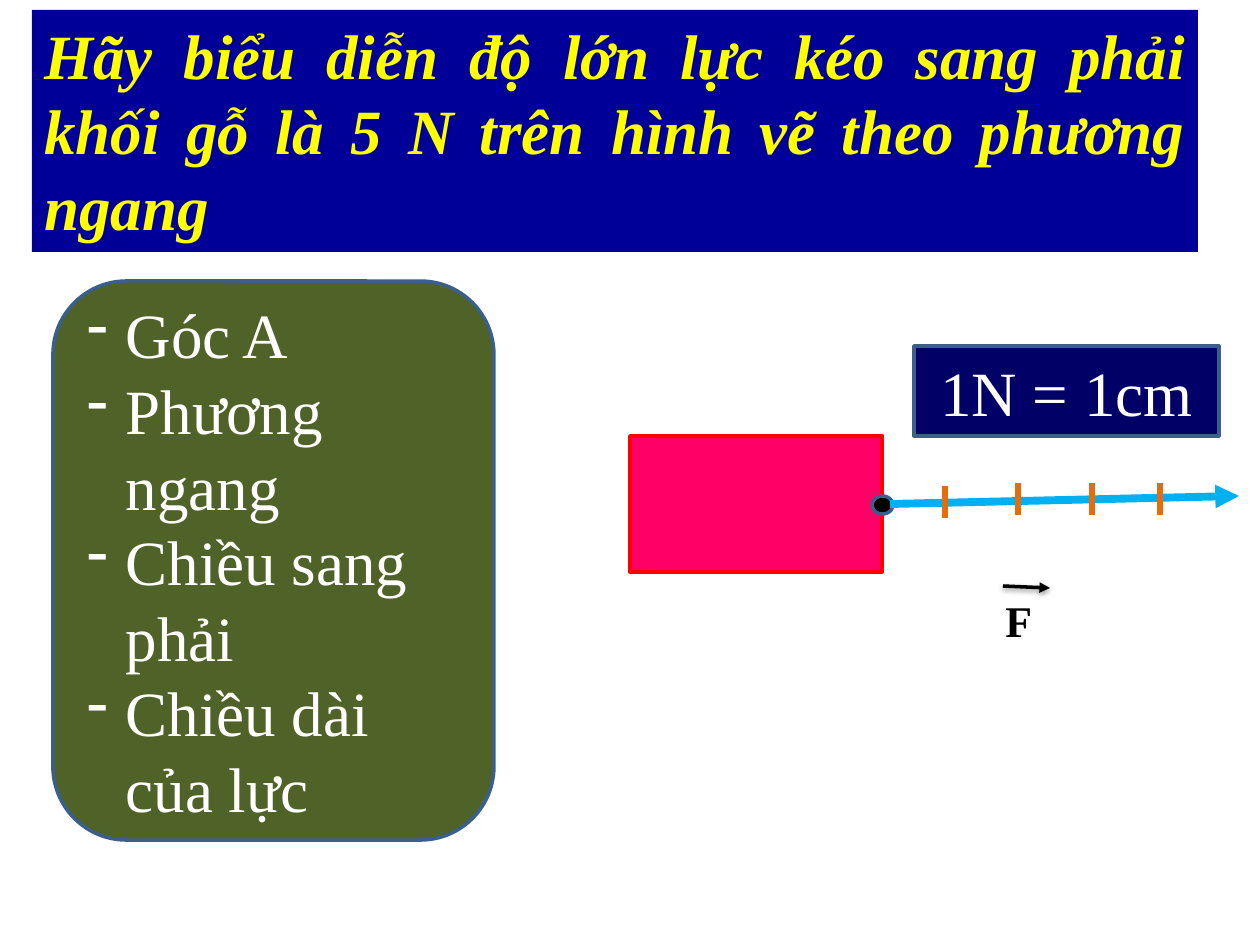
from lxml import etree
from pptx import Presentation
from pptx import util as u
from pptx.dml.color import RGBColor
from pptx.enum import shapes, text
from pptx.oxml.ns import qn

COLORS = {
    "navy": "000099", "deep_navy": "000066", "yellow": "FFFF00",
    "pink": "FF0066", "red": "FF0000", "olive": "4F6228",
    "steel": "3A5F8C", "sky": "00B0F0", "orange": "E46C0A",
    "white": "FFFFFF", "black": "000000",
}
SCALE = u.Inches(1) / 126


def px(length):
    return round(length * SCALE)


def rgb(name):
    return RGBColor.from_string(COLORS[name])


class ForceSlide:
    font_name = "Times New Roman"

    def __init__(self, slide):
        self.slide = slide

    def fill_text(self, frame, lines, size, color, align, bullet=None, **formats):
        frame.word_wrap = True
        for index, line in enumerate(lines):
            paragraph = frame.paragraphs[0] if index == 0 else frame.add_paragraph()
            paragraph.alignment = align
            run = paragraph.add_run()
            run.text = line
            run.font.color.rgb = rgb(color)
            style = {"name": self.font_name, "size": u.Pt(size), **formats}
            for attribute, value in style.items():
                setattr(run.font, attribute, value)
            if bullet:
                properties = paragraph._p.get_or_add_pPr()
                properties.set("marL", str(px(39)))
                properties.set("indent", str(-px(39)))
                etree.SubElement(properties, qn("a:buFontTx"))
                etree.SubElement(properties, qn("a:buChar"), char=bullet)

    def block(self, kind, box, fill, line=None):
        block = self.slide.shapes.add_shape(kind, *map(px, box))
        block.shadow.inherit = False
        block.fill.solid()
        block.fill.fore_color.rgb = rgb(fill)
        if line:
            block.line.color.rgb = rgb(line)
            block.line.width = u.Pt(2)
        else:
            block.line.fill.background()
        block.text_frame.vertical_anchor = text.MSO_ANCHOR.MIDDLE
        return block

    def label(self, box):
        frame = self.slide.shapes.add_textbox(*map(px, box)).text_frame
        frame.auto_size = text.MSO_AUTO_SIZE.SHAPE_TO_FIT_TEXT
        return frame

    def line(self, start, end, color, width, arrow=False, shadow=False):
        line = self.slide.shapes.add_connector(
            shapes.MSO_CONNECTOR.STRAIGHT, *map(px, start + end))
        line.line.color.rgb = rgb(color)
        line.line.width = u.Pt(width)
        if arrow:
            etree.SubElement(line.line._get_or_add_ln(), qn("a:tailEnd"), type="triangle")
        effects = etree.SubElement(line._element.spPr, qn("a:effectLst"))
        if shadow:
            outer = etree.SubElement(
                effects, qn("a:outerShdw"), blurRad=str(u.Pt(3.1)),
                dist=str(u.Pt(1.6)), dir="5400000", rotWithShape="0")
            tint = etree.SubElement(outer, qn("a:srgbClr"), val=COLORS["black"])
            etree.SubElement(tint, qn("a:alpha"), val="38000")


def main():
    deck = Presentation()
    deck.slide_width, deck.slide_height = px(1260), px(945)
    page = ForceSlide(deck.slides.add_slide(deck.slide_layouts[6]))
    kinds, align = shapes.MSO_SHAPE, text.PP_ALIGN

    question = page.block(kinds.RECTANGLE, (32, 10, 1166, 242), "navy").text_frame
    question.vertical_anchor = text.MSO_ANCHOR.TOP
    question.auto_size = text.MSO_AUTO_SIZE.SHAPE_TO_FIT_TEXT
    page.fill_text(
        question,
        ["Hãy biểu diễn độ lớn lực kéo sang phải khối gỗ là 5 N "
         "trên hình vẽ theo phương ngang"],
        36, "yellow", align.JUSTIFY, bold=True, italic=True)

    page.block(kinds.RECTANGLE, (630, 436, 252, 136), "pink", "red")
    elements = page.block(kinds.ROUNDED_RECTANGLE, (53, 281, 441, 559), "olive", "steel")
    page.fill_text(
        elements.text_frame,
        ["Góc A", "Phương ngang", "Chiều sang phải", "Chiều dài của lực"],
        36, "white", align.LEFT, bullet="-")

    page.block(kinds.FLOWCHART_CONNECTOR, (872, 496, 21, 18), "black", "steel")
    page.line((890, 504), (1239, 496), "sky", 4.5, arrow=True)
    for x, top in ((945, 486), (1018, 483), (1092, 483), (1160, 483)):
        page.line((x, top), (x, top + 32), "orange", 3)

    ratio = page.block(kinds.RECTANGLE, (914, 346, 305, 90), "deep_navy", "steel")
    page.fill_text(ratio.text_frame, ["1N = 1cm"], 36, "white", align.CENTER)

    force = page.label((993, 588, 57, 66))
    page.fill_text(force, ["F"], 25, "black", align.LEFT, bold=True)
    page.line((1003, 586), (1050, 588), "black", 2, arrow=True, shadow=True)

    deck.save("out.pptx")


if __name__ == "__main__":
    main()
